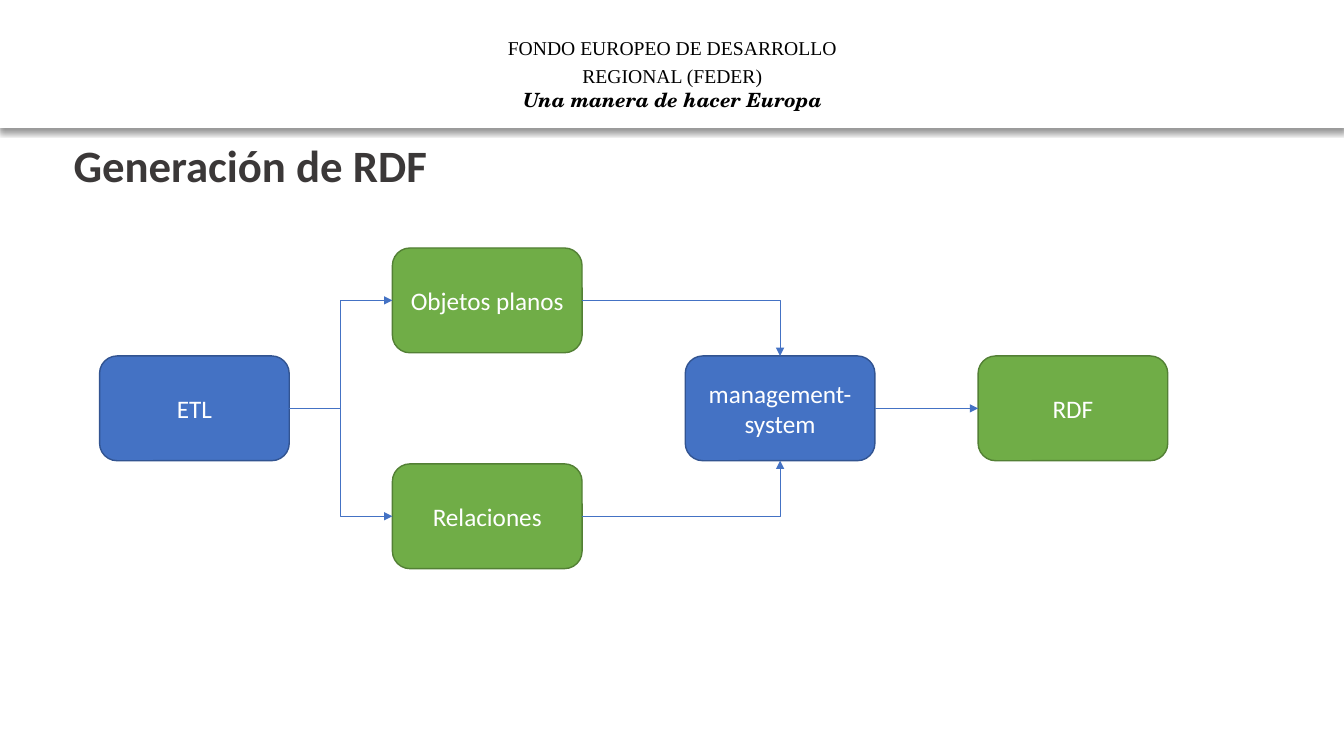
from lxml import etree
from pptx import Presentation
from pptx.dml.color import RGBColor
from pptx.enum.shapes import MSO_CONNECTOR, MSO_SHAPE
from pptx.enum.text import MSO_ANCHOR, PP_ALIGN
from pptx.oxml import parse_xml
from pptx.oxml.ns import nsdecls, qn
from pptx.util import Cm, Pt

STRAIGHT, ELBOW = MSO_CONNECTOR.STRAIGHT, MSO_CONNECTOR.ELBOW
RECTANGLE, ROUNDED = MSO_SHAPE.RECTANGLE, MSO_SHAPE.ROUNDED_RECTANGLE
TOP, MIDDLE = MSO_ANCHOR.TOP, MSO_ANCHOR.MIDDLE
CENTER, LEFT = PP_ALIGN.CENTER, PP_ALIGN.LEFT
TOP_SIDE, LEFT_SIDE, BOTTOM_SIDE, RIGHT_SIDE = range(4)

# Content
HEADING = "Generación de RDF"
# text, font, bold and italic, line spacing
FUND_LINES = [
    ("FONDO EUROPEO DE DESARROLLO REGIONAL (FEDER)", "Times New Roman", False, 1.2),
    ("Una manera de hacer Europa", "TeX Gyre Schola", True, 1.0),
]
# text: column, row, colour
STEPS = {
    "ETL": (0, 1, "blue"),
    "Objetos planos": (1, 0, "green"),
    "Relaciones": (1, 2, "green"),
    "management-system": (2, 1, "blue"),
    "RDF": (3, 1, "green"),
}
# from, to, side reached, connector type, preset geometry
FLOWS = [
    ("ETL", "Objetos planos", LEFT_SIDE, ELBOW, "bentConnector3"),
    ("ETL", "Relaciones", LEFT_SIDE, ELBOW, "bentConnector3"),
    ("Objetos planos", "management-system", TOP_SIDE, ELBOW, "bentConnector2"),
    ("Relaciones", "management-system", BOTTOM_SIDE, ELBOW, "bentConnector2"),
    ("management-system", "RDF", LEFT_SIDE, STRAIGHT, "straightConnector1"),
]
COLORS = {
    "white": "FFFFFF", "black": "000000", "heading": "3B3838",
    "blue": "4472C4", "blue edge": "325491",
    "green": "70AD47", "green edge": "538035",
}

# Layout, in centimetres
SLIDE_W, SLIDE_H = 33.87, 19.05
STEP_W, STEP_H = 4.78, 2.64
FIRST_X, FIRST_Y = 2.51, 6.25
COLUMN_PITCH, ROW_PITCH = 7.38, 2.72


def color(name):
    return RGBColor.from_string(COLORS[name])


def add_run(paragraph, text, font_name, size, color_name, bold=False, italic=False):
    run = paragraph.add_run()
    run.text = text
    run.font.name = font_name
    run.font.size = Pt(size)
    run.font.bold = bold
    run.font.italic = italic
    run.font.color.rgb = color(color_name)


def add_block(slide, preset, left, top, width, height, fill, edge):
    block = slide.shapes.add_shape(preset, Cm(left), Cm(top), Cm(width), Cm(height))
    block.shadow.inherit = False
    block.fill.solid()
    block.fill.fore_color.rgb = color(fill)
    block.line.color.rgb = color(edge)
    block.line.width = Pt(1)
    return block


def add_header(slide):
    band = add_block(slide, RECTANGLE, 0, 0, SLIDE_W, 3.2, "white", "white")
    effects = band._element.spPr.find(qn("a:effectLst"))
    effects.append(parse_xml(
        f'<a:outerShdw {nsdecls("a")} blurRad="{Pt(4)}" dist="{Pt(3)}" dir="5400000" '
        'rotWithShape="0"><a:srgbClr val="000000"><a:alpha val="40000"/>'
        '</a:srgbClr></a:outerShdw>'))

    fund = slide.shapes.add_textbox(Cm(11.33), Cm(0.66), Cm(11.23), Cm(2.29)).text_frame
    fund.word_wrap = True
    for index, (text, font_name, strong, spacing) in enumerate(FUND_LINES):
        paragraph = fund.paragraphs[0] if index == 0 else fund.add_paragraph()
        paragraph.alignment = CENTER
        paragraph.line_spacing = spacing
        add_run(paragraph, text, font_name, 14, "black", strong, strong)


def add_heading(slide):
    title = slide.shapes.title
    title.left, title.top, title.width, title.height = Cm(1.6), Cm(3.5), Cm(30.6), Cm(1.7)
    title.text_frame.vertical_anchor = TOP
    paragraph = title.text_frame.paragraphs[0]
    paragraph.alignment = LEFT
    paragraph.line_spacing = 0.9
    add_run(paragraph, HEADING, "Calibri", 32, "heading", bold=True)


def add_step(slide, text, column, row, fill):
    step = add_block(slide, ROUNDED, FIRST_X + column * COLUMN_PITCH,
                     FIRST_Y + row * ROW_PITCH, STEP_W, STEP_H, fill, f"{fill} edge")
    frame = step.text_frame
    frame.word_wrap = True
    frame.vertical_anchor = MIDDLE
    frame.paragraphs[0].alignment = CENTER
    add_run(frame.paragraphs[0], text, "Calibri", 18, "white")
    return step


def add_flow(slide, source, target, side, kind, preset):
    flow = slide.shapes.add_connector(kind, 0, 0, 0, 0)
    flow.begin_connect(source, RIGHT_SIDE)
    flow.end_connect(target, side)
    flow.line.color.rgb = color("blue")
    flow.line.width = Pt(0.5)
    properties = flow._element.spPr
    properties.find(qn("a:prstGeom")).set("prst", preset)
    etree.SubElement(properties.find(qn("a:ln")), qn("a:tailEnd"), type="triangle")
    etree.SubElement(properties, qn("a:effectLst"))


def main():
    deck = Presentation()
    deck.slide_width, deck.slide_height = Cm(SLIDE_W), Cm(SLIDE_H)
    slide = deck.slides.add_slide(deck.slide_layouts[5])

    add_header(slide)
    add_heading(slide)

    # Process diagram
    steps = {text: add_step(slide, text, *place) for text, place in STEPS.items()}
    for source, target, side, kind, preset in FLOWS:
        add_flow(slide, steps[source], steps[target], side, kind, preset)

    deck.save("out.pptx")


if __name__ == "__main__":
    main()
